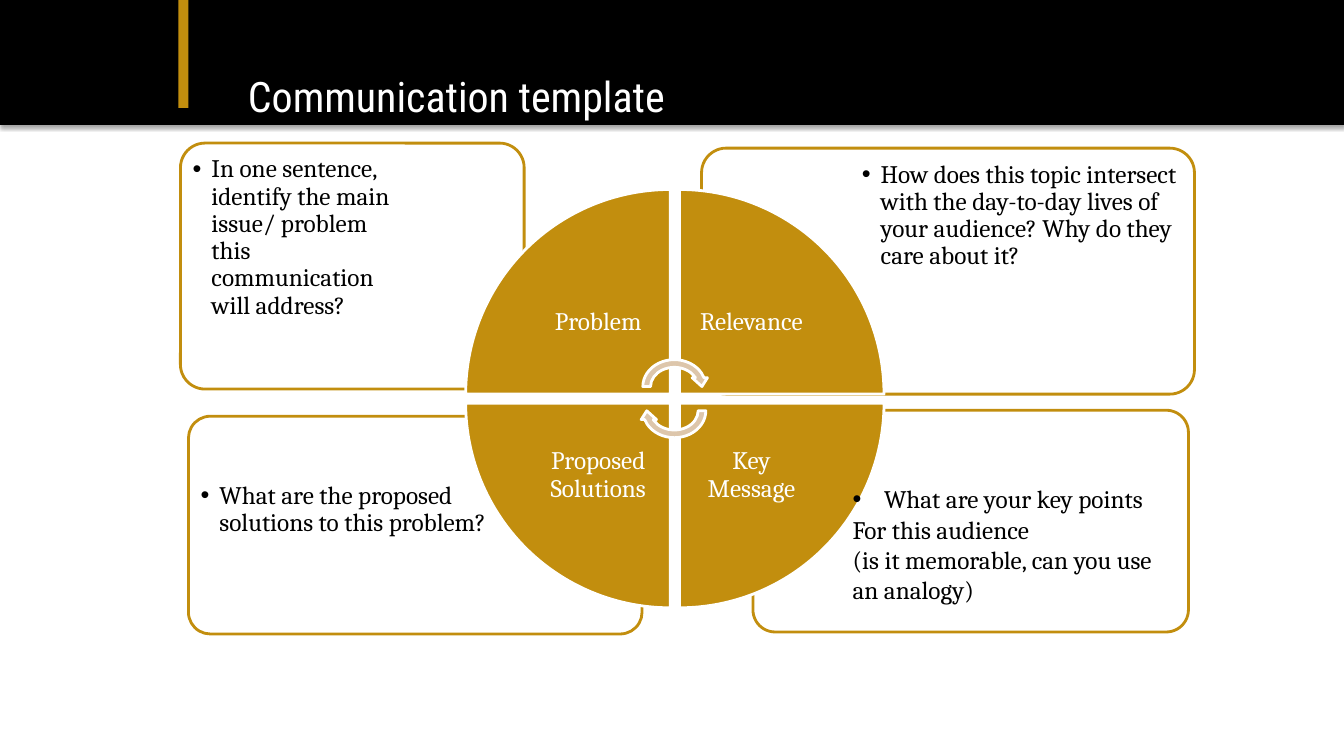
from dataclasses import dataclass

import lxml.etree
import pptx
import pptx.dml.color
import pptx.enum.shapes
import pptx.enum.text
import pptx.oxml.ns
import pptx.util

Pt = pptx.util.Pt
qn = pptx.oxml.ns.qn
Shape = pptx.enum.shapes.MSO_SHAPE
Align = pptx.enum.text.PP_ALIGN
Anchor = pptx.enum.text.MSO_ANCHOR
AutoSize = pptx.enum.text.MSO_AUTO_SIZE

GOLD, TAN, WHITE, BLACK = "C28E0E", "DDC6AB", "FFFFFF", "000000"
BODY_FONT = {"name": "Cambria", "size": Pt(18)}
TITLE_FONT = {"name": "Roboto Condensed", "size": Pt(30)}

WEDGE_LEFT, WEDGE_TOP = 332.64, 135.36
WEDGE_SIZE, WEDGE_PITCH, LABEL_SIZE = 146.16, 152.64, 102.96


@dataclass(frozen=True)
class Box:
    left: float
    top: float
    width: float
    height: float

    def emu(self) -> list:
        return [Pt(v) for v in (self.left, self.top, self.width, self.height)]


@dataclass(frozen=True)
class Panel:
    frame: Box
    text_area: Box
    lines: tuple
    inset: float = 5.04
    indent: float = 13.5
    spacing: float = 0.9
    wrap: bool = True


@dataclass(frozen=True)
class Quadrant:
    label: str
    column: int
    row: int
    rotation: int


PANELS = (
    Panel(Box(537.84, 293.04, 311.04, 158.4), Box(601.92, 342, 249.12, 94.32),
          ("What are your key points", "For this audience",
           "(is it memorable, can you use", "an analogy)"),
          inset=7.2, indent=22.5, spacing=1.0, wrap=False),
    Panel(Box(134.64, 297.36, 324, 155.52), Box(138.24, 339.84, 219.6, 110.16),
          ("What are the proposed solutions to this problem?",)),
    Panel(Box(501.12, 105.84, 352.08, 175.68), Box(610.56, 110.16, 238.32, 124.56),
          ("How does this topic intersect with the day-to-day lives of "
           "your audience? Why do they care about it?",)),
    Panel(Box(128.88, 102.24, 245.52, 175.68), Box(132.48, 106.56, 164.16, 124.56),
          ("In one sentence, identify the main issue/ problem this "
           "communication will address?",)),
)

QUADRANTS = (
    Quadrant("Problem", 0, 0, 0),
    Quadrant("Relevance", 1, 0, 90),
    Quadrant("Key Message", 1, 1, 180),
    Quadrant("Proposed Solutions", 0, 1, 270),
)


def rgb(value: str) -> pptx.dml.color.RGBColor:
    return pptx.dml.color.RGBColor.from_string(value)


def add_xml(parent, tag: str, **attributes):
    return lxml.etree.SubElement(parent, qn(tag), {k: str(v) for k, v in attributes.items()})


def add_filled(slide, kind, box: Box, fill: str, line: str = "", rotation: int = 0):
    shape = slide.shapes.add_shape(kind, *box.emu())
    shape.shadow.inherit = False
    shape.rotation = rotation
    shape.fill.solid()
    shape.fill.fore_color.rgb = rgb(fill)
    if line:
        shape.line.color.rgb = rgb(line)
        shape.line.width = Pt(2)
    else:
        shape.line.fill.background()
    return shape


def add_band(slide, box: Box, fill: str) -> None:
    """Draw a header block with a soft shadow below it."""
    band = add_filled(slide, Shape.RECTANGLE, box, fill)
    effects = band._element.spPr.find(qn("a:effectLst"))
    shadow = add_xml(effects, "a:outerShdw", blurRad=Pt(3.1), dist=Pt(1.8),
                     dir=5400000, rotWithShape=0)
    add_xml(add_xml(shadow, "a:srgbClr", val=BLACK), "a:alpha", val=35000)


def add_text(slide, box: Box, lines: tuple, font: dict, color: str, inset: float = 0,
             frame_format: dict = {}, paragraph_format: dict = {}):
    frame = slide.shapes.add_textbox(*box.emu()).text_frame
    margins = {f"margin_{side}": Pt(inset) for side in ("left", "top", "right", "bottom")}
    for name, value in ({"word_wrap": True} | margins | frame_format).items():
        setattr(frame, name, value)
    for index, line in enumerate(lines):
        paragraph = frame.add_paragraph() if index else frame.paragraphs[0]
        for name, value in paragraph_format.items():
            setattr(paragraph, name, value)
        run = paragraph.add_run()
        run.text = line
        for name, value in font.items():
            setattr(run.font, name, value)
        run.font.color.rgb = rgb(color)
    return frame


def add_bullet(paragraph, indent: float) -> None:
    properties = paragraph._p.get_or_add_pPr()
    properties.set("marL", str(Pt(indent)))
    properties.set("indent", str(-Pt(indent)))
    add_xml(properties, "a:buFont", typeface="Arial")
    add_xml(properties, "a:buChar", char="•")


def add_panel_frame(slide, panel: Panel) -> None:
    frame = add_filled(slide, Shape.ROUNDED_RECTANGLE, panel.frame, WHITE, GOLD)
    frame.adjustments[0] = 0.1
    color = frame._element.spPr.find(qn("a:solidFill")).find(qn("a:srgbClr"))
    add_xml(color, "a:alpha", val=90000)


def add_panel_text(slide, panel: Panel) -> None:
    fit = AutoSize.NONE if panel.wrap else AutoSize.SHAPE_TO_FIT_TEXT
    text = add_text(slide, panel.text_area, panel.lines, BODY_FONT, BLACK, panel.inset,
                    {"word_wrap": panel.wrap, "auto_size": fit},
                    {"line_spacing": panel.spacing})
    if not panel.wrap:
        for side in ("top", "bottom"):
            setattr(text, f"margin_{side}", Pt(3.6))
    add_bullet(text.paragraphs[0], panel.indent)


def add_quadrant(slide, quadrant: Quadrant) -> None:
    """Draw a wedge and its label, which sits in the corner nearest the centre."""
    left = WEDGE_LEFT + quadrant.column * WEDGE_PITCH
    top = WEDGE_TOP + quadrant.row * WEDGE_PITCH
    add_filled(slide, Shape.PIE_WEDGE, Box(left, top, WEDGE_SIZE, WEDGE_SIZE),
               GOLD, WHITE, quadrant.rotation)
    shift = WEDGE_SIZE - LABEL_SIZE
    label_box = Box(left + shift * (1 - quadrant.column), top + shift * (1 - quadrant.row),
                    LABEL_SIZE, LABEL_SIZE)
    add_text(slide, label_box, (quadrant.label,), BODY_FONT, WHITE, 10.08,
             {"vertical_anchor": Anchor.MIDDLE},
             {"alignment": Align.CENTER, "line_spacing": 0.9})


def main() -> None:
    deck = pptx.Presentation()
    deck.slide_width, deck.slide_height = Pt(960), Pt(540)
    slide = deck.slides.add_slide(deck.slide_layouts[6])

    add_band(slide, Box(0, 0, 960, 89.28), BLACK)
    add_band(slide, Box(127.44, 0, 7.2, 77.04), GOLD)
    add_text(slide, Box(177.12, 47.52, 640.08, 41.76), ("Communication template",),
             TITLE_FONT, WHITE, frame_format={"vertical_anchor": Anchor.MIDDLE})

    for panel in PANELS:
        add_panel_frame(slide, panel)
    for quadrant in QUADRANTS:
        add_quadrant(slide, quadrant)
    for top, rotation in ((254.16, 0), (271.44, 180)):
        add_filled(slide, Shape.CIRCULAR_ARROW, Box(456.48, top, 50.4, 43.92),
                   TAN, WHITE, rotation)
    for panel in PANELS:
        add_panel_text(slide, panel)

    deck.save("out.pptx")


if __name__ == "__main__":
    main()
